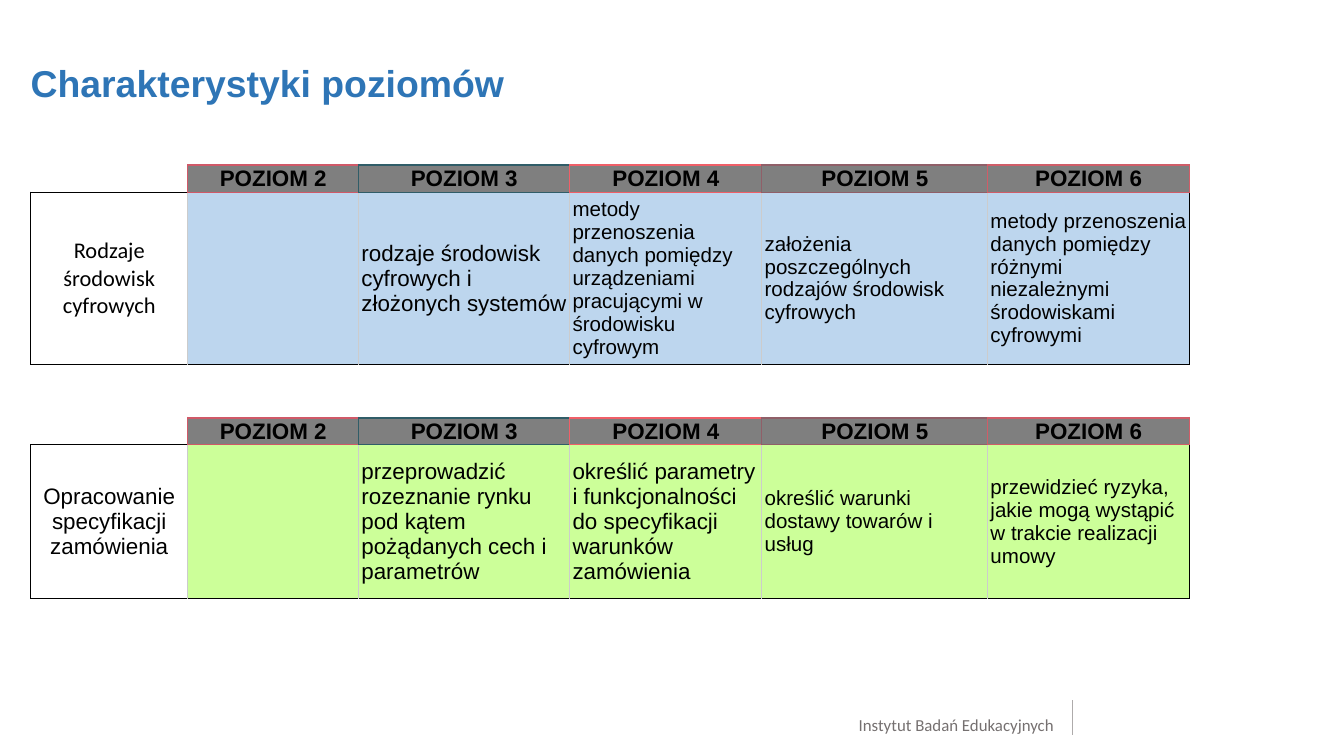
from lxml import etree
from pptx import Presentation
from pptx import util as u
from pptx.dml import color as dml
from pptx.enum import shapes, text
from pptx.oxml import ns


def rgb(value):
    return dml.RGBColor.from_string(value)


def style_cell(cell, words, size, font, align, inset, borders, bold=False):
    """Fill in a cell; borders maps L, R, T, B to (colour, points)."""
    cell.text_frame.text = words
    cell.vertical_anchor = text.MSO_ANCHOR.MIDDLE
    cell.margin_left = cell.margin_right = u.Cm(inset)
    cell.margin_top = cell.margin_bottom = u.Cm(0)
    paragraph = cell.text_frame.paragraphs[0]
    paragraph.alignment = align
    for run in paragraph.runs:
        run.font.size, run.font.name, run.font.bold = u.Pt(size), font, bold
        run.font.color.rgb = rgb("000000")
    properties = cell._tc.get_or_add_tcPr()
    for side in "LRTB":
        colour, points = borders[side]
        line = etree.SubElement(properties, ns.qn("a:ln" + side), w=str(u.Pt(points)))
        solid = etree.SubElement(line, ns.qn("a:solidFill"))
        etree.SubElement(solid, ns.qn("a:srgbClr"), val=colour)


presentation = Presentation()
presentation.slide_width, presentation.slide_height = u.Cm(25.4), u.Cm(14.29)
slide = presentation.slides.add_slide(presentation.slide_layouts[6])
LEFT, CENTER, RIGHT = text.PP_ALIGN.LEFT, text.PP_ALIGN.CENTER, text.PP_ALIGN.RIGHT

# Title and footer
for words, place, size, font, colour, bold, align in [
    ("Charakterystyki poziomów", (0.58, 1.14, 21.9, 1.47), 20, "Arial", "2E75B6", True, LEFT),
    ("Instytut Badań Edukacyjnych", (15.67, 13.51, 4.24, 0.36), 9, "Calibri", "757070", False, RIGHT),
]:
    frame = slide.shapes.add_textbox(*map(u.Cm, place)).text_frame
    frame.word_wrap = True
    frame.margin_left = frame.margin_right = frame.margin_top = frame.margin_bottom = 0
    frame.text = words
    frame.paragraphs[0].alignment = align
    run_font = frame.paragraphs[0].runs[0].font
    run_font.size, run_font.name, run_font.bold = u.Pt(size), font, bold
    run_font.color.rgb = rgb(colour)

divider = slide.shapes.add_connector(
    shapes.MSO_CONNECTOR.STRAIGHT, u.Cm(20.27), u.Cm(13.89), u.Cm(20.27), u.Cm(13.23))
divider.line.color.rgb = rgb("AEABAB")
divider.line.width = u.Pt(0.75)
etree.SubElement(divider._element.spPr, ns.qn("a:effectLst"))

# Each block: a row of level headings above a row of descriptions
column_widths = [2.97, 3.23, 3.99, 3.63, 4.27, 3.81]
table_left, heading_height, body_height = 0.58, 0.51, 2.9
heading_colours = ["D05968", "305D68", "F05F68", "905F68", "D05D68"]
blocks = [
    (3.12, "BDD6EE", [
        ("Rodzaje środowisk cyfrowych", 12, "Calibri"),
        ("", 12, "Arial"),
        ("rodzaje środowisk cyfrowych i złożonych systemów", 12, "Arial"),
        ("metody przenoszenia danych pomiędzy urządzeniami pracującymi w środowisku cyfrowym", 11, "Arial"),
        ("założenia poszczególnych rodzajów środowisk cyfrowych", 11, "Arial"),
        ("metody przenoszenia danych pomiędzy różnymi niezależnymi środowiskami cyfrowymi", 11, "Arial"),
    ]),
    (7.9, "CCFF99", [
        ("Opracowanie specyfikacji zamówienia", 12, "Arial"),
        ("", 12, "Arial"),
        ("przeprowadzić rozeznanie rynku pod kątem pożądanych cech i parametrów", 12, "Arial"),
        ("określić parametry i funkcjonalności do specyfikacji warunków zamówienia", 12, "Arial"),
        ("określić warunki dostawy towarów i usług", 11, "Arial"),
        ("przewidzieć ryzyka, jakie mogą wystąpić w trakcie realizacji umowy", 11, "Arial"),
    ]),
]

for top, body_fill, descriptions in blocks:
    tables = []
    for first_column, table_top, height in [(0, top + heading_height, body_height),
                                            (1, top, heading_height)]:
        widths = column_widths[first_column:]
        left = table_left + sum(column_widths[:first_column])
        table = slide.shapes.add_table(
            1, len(widths), u.Cm(left), u.Cm(table_top), u.Cm(sum(widths)), u.Cm(height)).table
        table.first_row = table.horz_banding = False
        for column, width in zip(table.columns, widths):
            column.width = u.Cm(width)
        tables.append(table)
    body, headings = tables

    last = len(descriptions) - 1
    for index, (words, size, font) in enumerate(descriptions):
        cell = body.cell(0, index)
        black, grey = ("000000", 0.6), ("CCCCCC", 0.6)
        borders = {"L": grey if index else black, "R": black if index == last else grey,
                   "T": black, "B": black}
        style_cell(cell, words, size, font, LEFT if index else CENTER, 0.05, borders)
        cell.fill.solid()
        cell.fill.fore_color.rgb = rgb(body_fill if index else "FFFFFF")

    for index, colour in enumerate(heading_colours):
        cell = headings.cell(0, index)
        next_colour = heading_colours[min(index + 1, len(heading_colours) - 1)]
        borders = {"L": (colour, 0.6), "R": (next_colour, 0.6),
                   "T": (colour, 1.2), "B": (colour, 0.6)}
        style_cell(cell, f"POZIOM {index + 2}", 12, "Arial", CENTER, 0.08, borders, bold=True)
        cell.fill.solid()
        cell.fill.fore_color.rgb = rgb("7F7F7F")

presentation.save("out.pptx")
